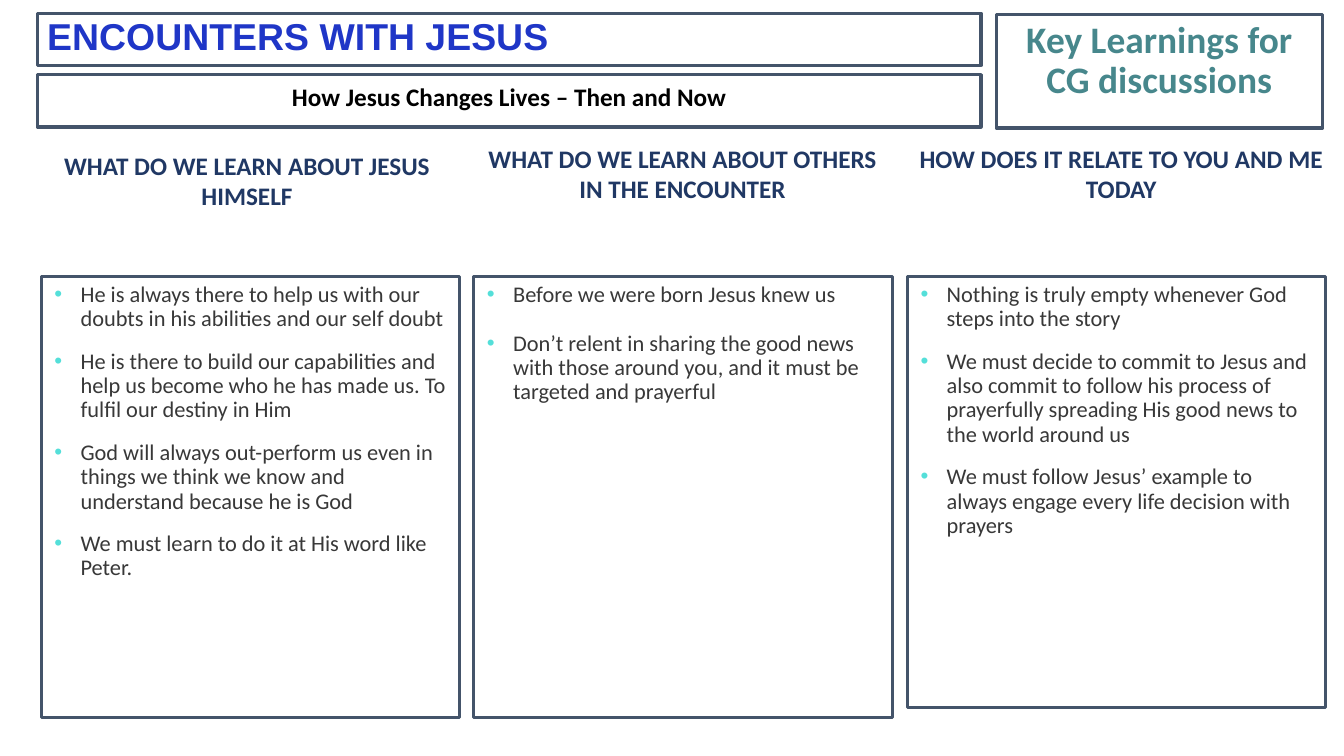
from dataclasses import dataclass

from lxml.etree import SubElement
from pptx import Presentation
from pptx.dml.color import RGBColor
from pptx.enum.shapes import MSO_SHAPE
from pptx.enum.text import MSO_ANCHOR, MSO_AUTO_SIZE, PP_ALIGN
from pptx.oxml.ns import qn
from pptx.util import Inches, Pt

BORDER = RGBColor(0x44, 0x54, 0x6A)
TITLE_BLUE = RGBColor(0x1F, 0x36, 0xC7)
BLACK = RGBColor(0x00, 0x00, 0x00)
TEAL = RGBColor(0x47, 0x87, 0x8C)
NAVY = RGBColor(0x20, 0x38, 0x64)
BODY_GREY = RGBColor(0x38, 0x38, 0x38)
BULLET_CYAN = RGBColor(0x54, 0xDF, 0xD9)

NARROW_INSETS = (0.1, 0.05)
WIDE_INSETS = (0.13, 0.07)
HEADING_HEIGHT = 0.74
PANEL_TOP = 2.74
PANEL_WIDTH = 4.15
BULLET_INDENT = 0.26


@dataclass(frozen=True)
class Box:
    left: float
    top: float
    width: float
    height: float


@dataclass(frozen=True)
class TextStyle:
    size: float
    color: RGBColor
    bold: bool = True
    font: str = "Calibri"
    alignment: PP_ALIGN = PP_ALIGN.CENTER
    line_spacing: float = 1.0


@dataclass(frozen=True)
class Banner:
    box: Box
    text: str
    style: TextStyle
    insets: tuple[float, float]


@dataclass(frozen=True)
class Column:
    heading_box: Box
    heading: str
    panel_left: float
    panel_height: float
    bullet_gap: float
    bullets: tuple[str, ...]


HEADING_STYLE = TextStyle(18, NAVY)
BULLET_STYLE = TextStyle(16, BODY_GREY, bold=False, alignment=PP_ALIGN.LEFT, line_spacing=0.9)

BANNERS = (
    Banner(
        Box(0.37, 0.13, 9.36, 0.52),
        "ENCOUNTERS WITH JESUS",
        TextStyle(26.7, TITLE_BLUE, font="Arial", alignment=PP_ALIGN.LEFT, line_spacing=0.9),
        NARROW_INSETS,
    ),
    Banner(
        Box(0.37, 0.74, 9.36, 0.52),
        "How Jesus Changes Lives – Then and Now",
        TextStyle(18, BLACK, line_spacing=1.07),
        NARROW_INSETS,
    ),
    Banner(
        Box(9.88, 0.14, 3.24, 1.13),
        "Key Learnings for CG discussions",
        TextStyle(26.7, TEAL, line_spacing=0.9),
        WIDE_INSETS,
    ),
)

COLUMNS = (
    Column(
        Box(0.37, 1.42, 4.16, HEADING_HEIGHT),
        "WHAT DO WE LEARN ABOUT JESUS HIMSELF",
        0.41, 4.38, 13.3,
        (
            "He is always there to help us with our doubts in his abilities and our self doubt",
            "He is there to build our capabilities and help us become who he has made us. "
            "To fulfil our destiny in Him",
            "God will always out-perform us even in things we think we know and understand "
            "because he is God",
            "We must learn to do it at His word like Peter.",
        ),
    ),
    Column(
        Box(4.63, 1.35, 4.28, HEADING_HEIGHT),
        "WHAT DO WE LEARN ABOUT OTHERS IN THE ENCOUNTER",
        4.7, 4.38, 17.5,
        (
            "Before we were born Jesus knew us",
            "Don’t relent in sharing the good news with those around you, and it must be "
            "targeted and prayerful",
        ),
    ),
    Column(
        Box(8.98, 1.35, 4.28, HEADING_HEIGHT),
        "HOW DOES IT RELATE TO YOU AND ME TODAY",
        9.0, 4.28, 13.3,
        (
            "Nothing is truly empty whenever God steps into the story",
            "We must decide to commit to Jesus and also commit to follow his process of "
            "prayerfully spreading His good news to the world around us",
            "We must follow Jesus’ example to always engage every life decision with prayers",
        ),
    ),
)


def write_text(text_frame, text: str, style: TextStyle, insets: tuple[float, float]) -> None:
    horizontal, vertical = insets
    text_frame.word_wrap = True
    text_frame.vertical_anchor = MSO_ANCHOR.TOP
    text_frame.margin_left = text_frame.margin_right = Inches(horizontal)
    text_frame.margin_top = text_frame.margin_bottom = Inches(vertical)
    text_frame.text = text
    for paragraph in text_frame.paragraphs:
        paragraph.alignment = style.alignment
        paragraph.line_spacing = style.line_spacing
        for run in paragraph.runs:
            run.font.name = style.font
            run.font.size = Pt(style.size)
            run.font.bold = style.bold
            run.font.color.rgb = style.color


def add_bullet(paragraph) -> None:
    properties = paragraph._p.get_or_add_pPr()
    properties.set("marL", str(Inches(BULLET_INDENT)))
    properties.set("indent", str(-Inches(BULLET_INDENT)))
    bullet_color = SubElement(properties, qn("a:buClr"))
    SubElement(bullet_color, qn("a:srgbClr"), val=str(BULLET_CYAN))
    SubElement(properties, qn("a:buFont"), typeface="Arial")
    SubElement(properties, qn("a:buChar"), char="•")


def add_frame(slide, box: Box):
    shape = slide.shapes.add_shape(
        MSO_SHAPE.RECTANGLE,
        Inches(box.left), Inches(box.top), Inches(box.width), Inches(box.height),
    )
    shape.shadow.inherit = False
    shape.fill.background()
    shape.line.color.rgb = BORDER
    shape.line.width = Pt(2.25)
    return shape


def add_banner(slide, banner: Banner) -> None:
    shape = add_frame(slide, banner.box)
    write_text(shape.text_frame, banner.text, banner.style, banner.insets)


def add_column(slide, column: Column) -> None:
    box = column.heading_box
    heading = slide.shapes.add_textbox(
        Inches(box.left), Inches(box.top), Inches(box.width), Inches(box.height)
    )
    write_text(heading.text_frame, column.heading, HEADING_STYLE, WIDE_INSETS)
    heading.text_frame.auto_size = MSO_AUTO_SIZE.SHAPE_TO_FIT_TEXT

    panel = add_frame(
        slide, Box(column.panel_left, PANEL_TOP, PANEL_WIDTH, column.panel_height)
    )
    write_text(panel.text_frame, "\n".join(column.bullets), BULLET_STYLE, WIDE_INSETS)
    for index, paragraph in enumerate(panel.text_frame.paragraphs):
        add_bullet(paragraph)
        if index > 0:
            paragraph.space_before = Pt(column.bullet_gap)


def main() -> None:
    presentation = Presentation()
    presentation.slide_width = Inches(13.33)
    presentation.slide_height = Inches(7.5)
    slide = presentation.slides.add_slide(presentation.slide_layouts[6])
    for banner in BANNERS:
        add_banner(slide, banner)
    for column in COLUMNS:
        add_column(slide, column)
    presentation.save("out.pptx")


if __name__ == "__main__":
    main()
